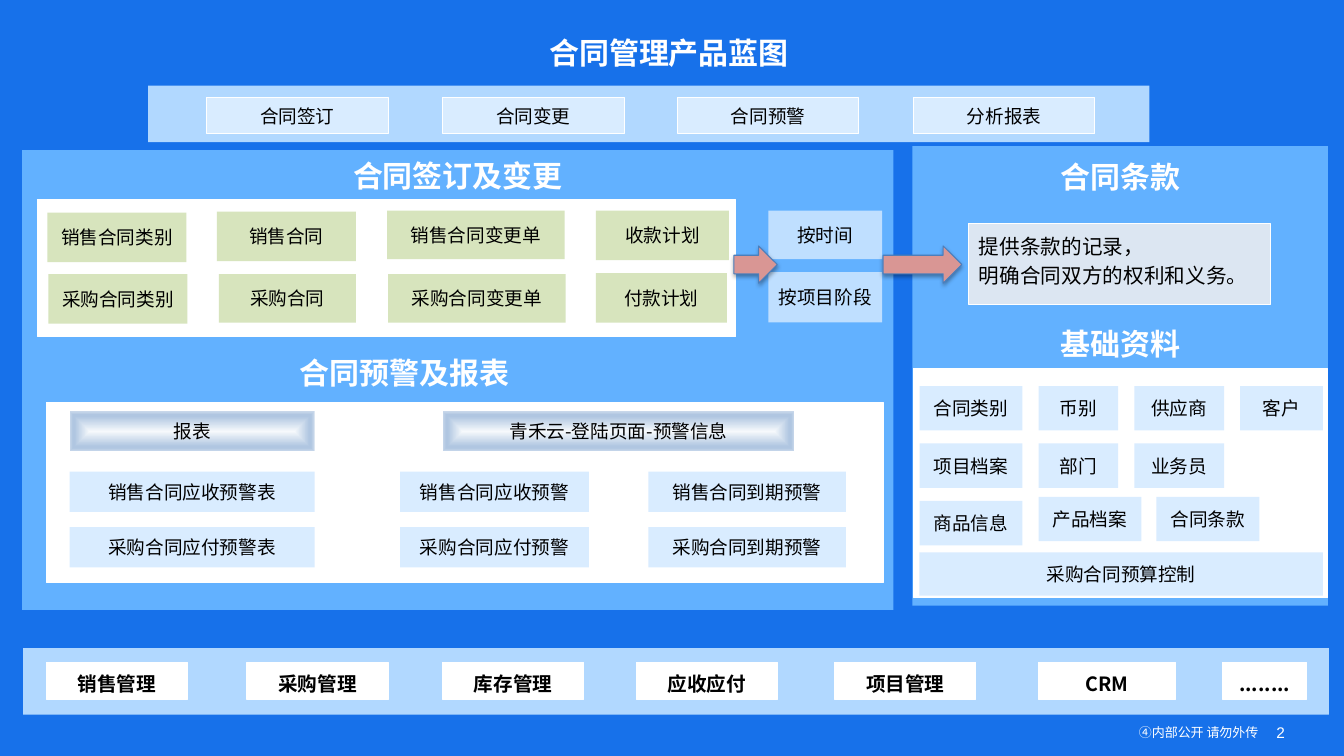
from dataclasses import dataclass
from typing import Optional

from pptx import Presentation
from pptx.dml.color import RGBColor
from pptx.enum.shapes import MSO_SHAPE as SHAPE
from pptx.enum.text import MSO_ANCHOR as ANCHOR, PP_ALIGN as ALIGN
from pptx.oxml import parse_xml
from pptx.oxml.ns import nsdecls, qn
from pptx.util import Emu, Pt

PX = 9144  # 100 px to the inch
FONT = "Noto Sans CJK SC"

WHITE = RGBColor(0xFF, 0xFF, 0xFF)
BLACK = RGBColor(0, 0, 0)
BACKGROUND = RGBColor(0x17, 0x71, 0xEA)
PANEL = RGBColor(0x62, 0xB1, 0xFF)
BAND = RGBColor(0xB1, 0xD8, 0xFF)
SKY = RGBColor(0xBF, 0xDF, 0xFF)
ICE = RGBColor(0xD9, 0xEC, 0xFF)
GREEN = RGBColor(0xD7, 0xE4, 0xBD)
NOTE = RGBColor(0xDC, 0xE6, 0xF2)
ARROW = RGBColor(0xD9, 0x96, 0x94)
ARROW_EDGE = RGBColor(0x4B, 0x7E, 0xBC)
GLOW_STOPS = [(0, RGBColor(0xF6, 0xF9, 0xFC)), (74, RGBColor(0xB0, 0xC6, 0xE1)),
              (83, RGBColor(0xB0, 0xC6, 0xE1)), (100, RGBColor(0xCA, 0xD9, 0xEB))]


@dataclass(frozen=True)
class Box:
    x: int
    y: int
    w: int
    h: int
    text: str = ""


@dataclass(frozen=True)
class Style:
    fill: Optional[RGBColor] = None
    line: Optional[RGBColor] = None
    size: float = 13.3
    bold: bool = False
    spacing: float = 1.0
    margins: tuple[int, int] = (5, 5)


TAG = Style(ICE)
OUTLINED_TAG = Style(ICE, WHITE)
DOCUMENT = Style(GREEN)
STAGE = Style(SKY)
GLOW = Style()
CARD = Style(WHITE, WHITE)
MODULE = Style(WHITE, WHITE, size=14, bold=True, spacing=1.2, margins=(10, 5))

PANELS = [
    (Box(22, 149, 864, 456), Style(PANEL)),
    (Box(905, 145, 412, 456), Style(PANEL)),
    (Box(37, 198, 693, 136), CARD),
    (Box(46, 399, 830, 179), CARD),
    (Box(906, 366, 411, 227), CARD),
    (Box(23, 643, 1295, 66), Style(BAND)),
    (Box(147, 85, 993, 56), Style(BAND)),
]
HEADINGS = [
    Box(241, 19, 845, 66, "合同管理产品蓝图"),
    Box(22, 154, 864, 41, "合同签订及变更"),
    Box(276, 349, 250, 41, "合同预警及报表"),
    Box(905, 146, 412, 58, "合同条款"),
    Box(905, 315, 412, 51, "基础资料"),
]
STEPS = ["合同签订", "合同变更", "合同预警", "分析报表"]
DOCUMENTS = [
    Box(47, 211, 138, 49, "销售合同类别"), Box(48, 272, 138, 49, "采购合同类别"),
    Box(215, 210, 138, 49, "销售合同"), Box(217, 272, 136, 48, "采购合同"),
    Box(384, 209, 176, 48, "销售合同变更单"), Box(385, 272, 176, 48, "采购合同变更单"),
    Box(591, 209, 132, 49, "收款计划"), Box(591, 271, 130, 49, "付款计划"),
]
STAGES = [Box(762, 209, 113, 48, "按时间"), Box(762, 270, 113, 50, "按项目阶段")]
REPORT_HEADS = [Box(69, 408, 243, 40, "报表"),
                Box(439, 408, 349, 40, "青禾云-登陆页面-预警信息")]
# left, width, texts from top to bottom
REPORT_COLUMNS = [
    (69, 243, ["销售合同应收预警表", "采购合同应付预警表"]),
    (397, 187, ["销售合同应收预警", "采购合同应付预警"]),
    (643, 196, ["销售合同到期预警", "采购合同到期预警"]),
]
MASTER_DATA_COLUMNS = [
    (912, 102, ["合同类别", "项目档案", "商品信息"]),
    (1030, 79, ["币别", "部门"]),
    (1125, 89, ["供应商", "业务员"]),
    (1230, 82, ["客户"]),
]
MASTER_DATA_EXTRA = [
    Box(1030, 493, 102, 44, "产品档案"), Box(1147, 493, 102, 44, "合同条款"),
    Box(912, 548, 400, 43, "采购合同预算控制"),
]
# left, width, text
MODULES = [(46, 140, "销售管理"), (245, 140, "采购管理"), (439, 140, "库存管理"),
           (631, 140, "应收应付"), (828, 140, "项目管理"), (1030, 136, "CRM"),
           (1213, 83, "........")]
ARROWS = [Box(728, 244, 43, 37), Box(876, 244, 78, 37)]


def emu(box: Box) -> list[Emu]:
    return [Emu(v * PX) for v in (box.x, box.y, box.w, box.h)]


def put_text(tf, text: str, *, size: float = 13.3, color: RGBColor = BLACK,
             bold: bool = False, align=ALIGN.CENTER, anchor=ANCHOR.MIDDLE,
             spacing=1.0, margins: tuple[int, int] = (5, 5), font: str = FONT) -> None:
    tf.word_wrap = True
    tf.vertical_anchor = anchor
    tf.margin_left = tf.margin_right = Emu(margins[0] * PX)
    tf.margin_top = tf.margin_bottom = Emu(margins[1] * PX)
    tf.text = text
    for p in tf.paragraphs:
        p.alignment = align
        p.line_spacing = spacing
        for r in p.runs:
            r.font.size = Pt(size)
            r.font.bold = bold
            r.font.color.rgb = color
            r.font.name = font
            r.font._element.append(parse_xml(f'<a:ea {nsdecls("a")} typeface="{font}"/>'))


def add_label(slide, box: Box, **fmt) -> None:
    put_text(slide.shapes.add_textbox(*emu(box)).text_frame, box.text, **fmt)


def add_box(slide, box: Box, style: Style, kind=SHAPE.RECTANGLE, **fmt):
    sp = slide.shapes.add_shape(kind, *emu(box))
    sp.shadow.inherit = False
    if style.fill is None:
        sp.fill.background()
    else:
        sp.fill.solid()
        sp.fill.fore_color.rgb = style.fill
    if style.line is None:
        sp.line.fill.background()
    else:
        sp.line.color.rgb = style.line
        sp.line.width = Pt(0.75)
    if box.text:
        put_text(sp.text_frame, box.text, **{
            "size": style.size, "bold": style.bold, "spacing": style.spacing,
            "margins": style.margins, **fmt})
    return sp


def add_glow_box(slide, box: Box) -> None:
    """Draw a box whose gradient runs from a light centre to its edges."""
    sp = add_box(slide, box, GLOW)
    stops = "".join(f'<a:gs pos="{pos * 1000}"><a:srgbClr val="{color}"/></a:gs>'
                    for pos, color in GLOW_STOPS)
    gradient = parse_xml(
        f'<a:gradFill {nsdecls("a")} rotWithShape="1"><a:gsLst>{stops}</a:gsLst>'
        '<a:path path="shape"><a:fillToRect l="50000" t="50000" r="50000" b="50000"/>'
        '</a:path></a:gradFill>')
    sp_pr = sp._element.spPr
    sp_pr.replace(sp_pr.find(qn("a:noFill")), gradient)


def add_arrow(slide, box: Box) -> None:
    sp = add_box(slide, box, Style(ARROW, ARROW_EDGE), SHAPE.RIGHT_ARROW)
    sp._element.spPr.find(qn("a:effectLst")).append(parse_xml(
        f'<a:outerShdw {nsdecls("a")} blurRad="{Pt(3.1)}" dist="{Pt(1.8)}" dir="5400000" '
        'rotWithShape="0"><a:srgbClr val="000000"><a:alpha val="35000"/></a:srgbClr>'
        '</a:outerShdw>'))


def add_columns(slide, columns: list, top: int, pitch: int, height: int) -> None:
    for left, width, texts in columns:
        for i, text in enumerate(texts):
            add_box(slide, Box(left, top + i * pitch, width, height, text), TAG)


def main() -> None:
    prs = Presentation()
    prs.slide_width, prs.slide_height = Emu(1333 * PX), Emu(750 * PX)
    slide = prs.slides.add_slide(prs.slide_layouts[6])
    slide.background.fill.solid()
    slide.background.fill.fore_color.rgb = BACKGROUND

    for panel, style in PANELS:
        add_box(slide, panel, style)
    for heading in HEADINGS:
        add_label(slide, heading, size=21.4, color=WHITE, bold=True)
    for i, step in enumerate(STEPS):
        add_box(slide, Box(205 + round(i * 233.67), 97, 180, 36, step), OUTLINED_TAG)
    for boxes, style in ((DOCUMENTS, DOCUMENT), (STAGES, STAGE), (MASTER_DATA_EXTRA, TAG)):
        for box in boxes:
            add_box(slide, box, style)
    for box in REPORT_HEADS:
        add_glow_box(slide, box)
    add_columns(slide, REPORT_COLUMNS, 468, 55, 40)
    add_columns(slide, MASTER_DATA_COLUMNS, 383, 57, 44)
    add_box(slide, Box(961, 222, 299, 80, "提供条款的记录，\n明确合同双方的权利和义务。"),
            Style(NOTE, WHITE, size=14.7, spacing=1.2, margins=(10, 5)),
            align=ALIGN.LEFT, anchor=ANCHOR.TOP)
    for left, width, text in MODULES:
        add_box(slide, Box(left, 657, width, 37, text), MODULE)
    for arrow in ARROWS:
        add_arrow(slide, arrow)
    add_label(slide, Box(1012, 716, 237, 19, "④内部公开 请勿外传"), size=9.3, color=WHITE,
              align=ALIGN.RIGHT, spacing=Pt(13.3), margins=(1, 1))
    add_label(slide, Box(1266, 717, 67, 19, "2"), size=11, color=WHITE,
              align=ALIGN.LEFT, margins=(0, 0), font="Arial")
    prs.save("out.pptx")


if __name__ == "__main__":
    main()
